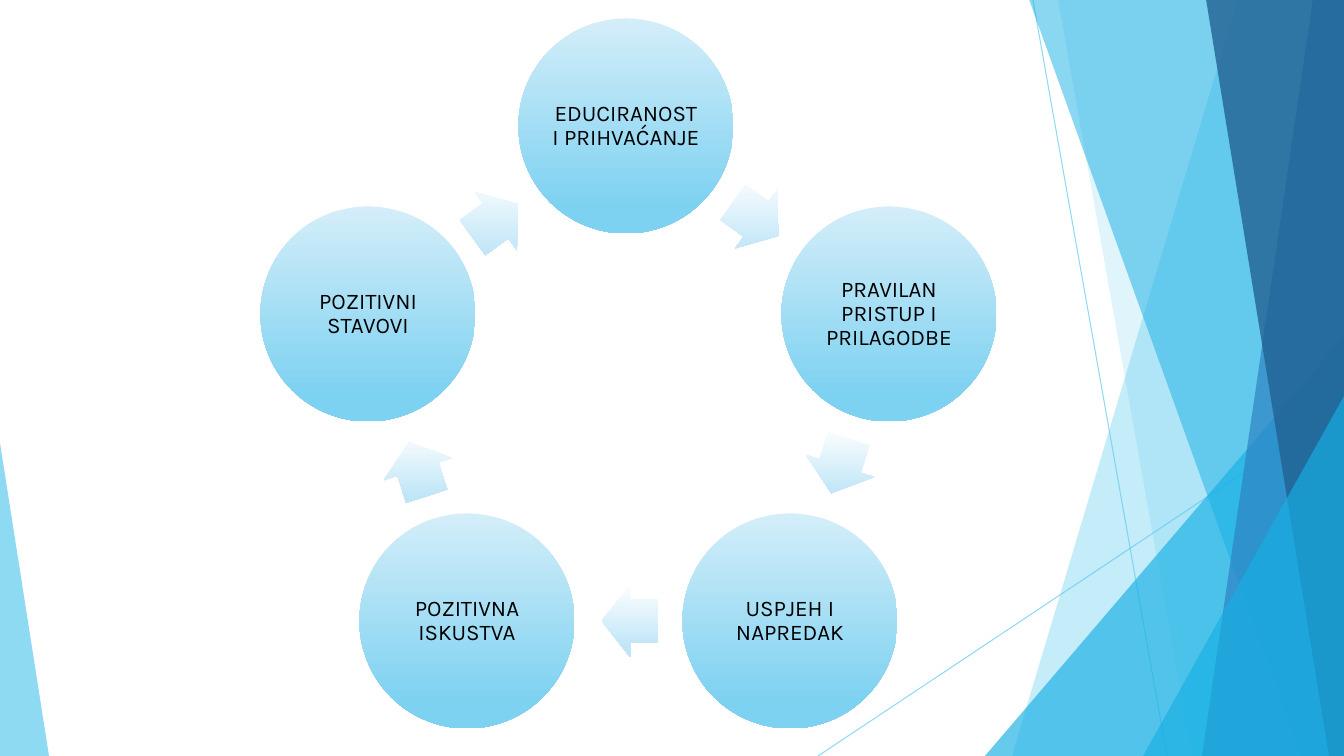
"""Build a slide with a five-step cycle beside a band of translucent facets."""
import math

from lxml import etree
from pptx import Presentation
from pptx.dml.color import RGBColor
from pptx.enum import shapes, text
from pptx.oxml.ns import qn
from pptx.util import Emu, Pt

PX = 914400 / 100.8
WIDTH, HEIGHT = 1344, 756
FONT = "Karla"
SKY, CYAN, BLUE, NAVY = "5FCBEF", "17B0E4", "2E83C3", "226292"

LINES = [((1033, 0), (1167, 756)), ((1344, 406), (818, 756))]
# Facets from back to front: bands (top x, bottom x) and corners (box, apex).
FACETS = [
    ("band", (1238, 1012), SKY, 36),
    ("band", (1058, 1192), SKY, 20),
    ("corner", (985, 336, 359, 420, 1), CYAN, 66),
    ("band", (1029, 1301), CYAN, 50),
    ("band", (1313, 1202), BLUE, 70),
    ("band", (1206, 1329), NAVY, 80),
    ("corner", (1143, 396, 201, 360, 1), CYAN, 66),
    ("corner", (0, 443, 49, 313, 0), SKY, 70),
]
STEPS = [
    ("EDUCIRANOST I PRIHVAĆANJE", 626, 126),
    ("PRAVILAN PRISTUP I PRILAGODBE", 889, 314),
    ("USPJEH I NAPREDAK", 790, 621),
    ("POZITIVNA ISKUSTVA", 467, 621),
    ("POZITIVNI STAVOVI", 368, 314),
]
DIAMETER = 215
ARROW_W, ARROW_H, ARROW_BACK = 57, 72, 1.6
STEP_FILL = ("D4EEF9", "7DD1F1")
ARROW_FILL = ("FCFEFF", "BFE5F7")


def px(*values):
    return [Emu(round(v * PX)) for v in values]


def rgb(code):
    return RGBColor.from_string(code)


def set_alpha(sp, percent):
    for color in sp._element.spPr.iter(qn("a:srgbClr")):
        etree.SubElement(color, qn("a:alpha"), val=str(percent * 1000))


def paint_facet(sp, color, percent):
    sp.shadow.inherit = False
    sp.fill.solid()
    sp.fill.fore_color.rgb = rgb(color)
    sp.line.fill.background()
    set_alpha(sp, percent)


def paint_gradient(sp, colors):
    sp.shadow.inherit = False
    sp.line.fill.background()
    sp.fill.gradient()
    sp.fill.gradient_angle = 270
    for stop, position, color in zip(sp.fill.gradient_stops, (0, 0.88), colors):
        stop.position = position
        stop.color.rgb = rgb(color)
    sp._element.spPr.find(qn("a:gradFill")).set("rotWithShape", "0")


def add_line(s, start, end):
    line = s.shapes.add_connector(shapes.MSO_CONNECTOR.STRAIGHT, *px(*start, *end))
    line.line.width = Pt(0.75)
    line.line.color.rgb = rgb(SKY)
    set_alpha(line, 70)
    etree.SubElement(line._element.spPr, qn("a:effectLst"))


def add_band(s, top, bottom):
    builder = s.shapes.build_freeform(top, -1, scale=PX)
    builder.add_line_segments([(WIDTH, -1), (WIDTH, HEIGHT), (bottom, HEIGHT)], close=True)
    return builder.convert_to_shape()


def add_corner(s, x, y, w, h, apex):
    sp = s.shapes.add_shape(shapes.MSO_SHAPE.ISOSCELES_TRIANGLE, *px(x, y, w, h))
    sp.adjustments[0] = apex
    return sp


def add_centered(s, kind, x, y, w, h):
    return s.shapes.add_shape(kind, *px(x - w / 2, y - h / 2, w, h))


def add_step(s, label, x, y):
    sp = add_centered(s, shapes.MSO_SHAPE.OVAL, x, y, DIAMETER, DIAMETER)
    paint_gradient(sp, STEP_FILL)
    tf = sp.text_frame
    tf.word_wrap = True
    tf.vertical_anchor = text.MSO_ANCHOR.MIDDLE
    tf.margin_left, tf.margin_top, tf.margin_right, tf.margin_bottom = px(2, 2, 2, 2)
    p = tf.paragraphs[0]
    p.alignment = text.PP_ALIGN.CENTER
    p.line_spacing = 0.9
    r = p.add_run()
    r.text = label
    r.font.name = FONT
    r.font.size = Pt(16)
    r.font.color.rgb = rgb("000000")


def add_arrow(s, start, end):
    angle = math.atan2(end[1] - start[1], end[0] - start[0])
    x = (start[0] + end[0]) / 2 - ARROW_BACK * math.cos(angle)
    y = (start[1] + end[1]) / 2 - ARROW_BACK * math.sin(angle)
    sp = add_centered(s, shapes.MSO_SHAPE.RIGHT_ARROW, x, y, ARROW_W, ARROW_H)
    sp.adjustments[0], sp.adjustments[1] = 0.6, 0.5
    sp.rotation = math.degrees(angle) % 360
    paint_gradient(sp, ARROW_FILL)


def main():
    prs = Presentation()
    prs.slide_width, prs.slide_height = px(WIDTH, HEIGHT)
    s = prs.slides.add_slide(prs.slide_layouts[6])
    for start, end in LINES:
        add_line(s, start, end)
    draw = {"band": add_band, "corner": add_corner}
    for kind, geometry, color, percent in FACETS:
        paint_facet(draw[kind](s, *geometry), color, percent)
    for (label, *center), (_, *following) in zip(STEPS, STEPS[1:] + STEPS[:1]):
        add_step(s, label, *center)
        add_arrow(s, center, following)
    prs.save("out.pptx")


if __name__ == "__main__":
    main()
